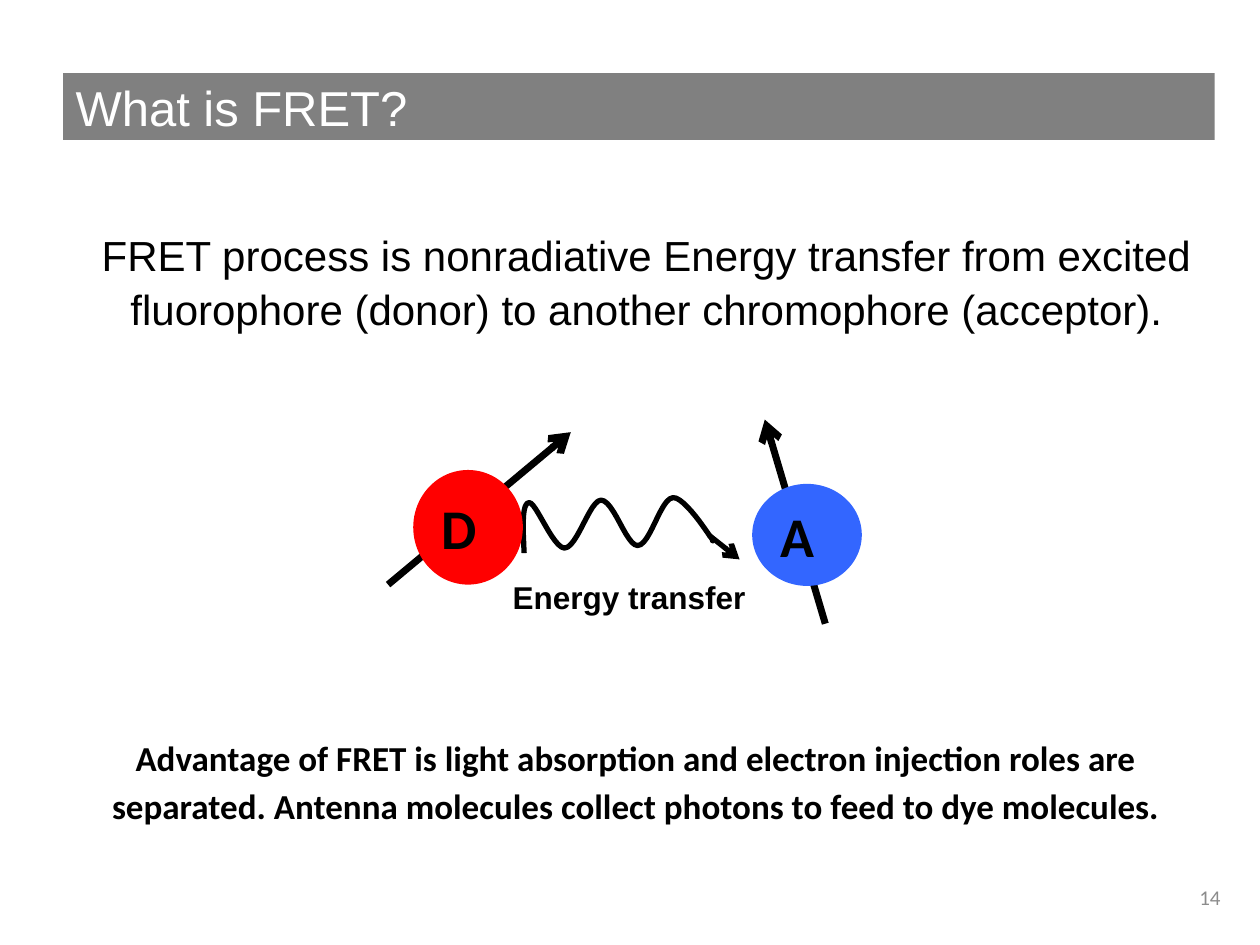
import pptx
import pptx.util
import pptx.dml.color
import pptx.enum.shapes
import pptx.enum.text
import pptx.oxml
import pptx.oxml.ns

COLORS = {"bar": "808080", "white": "FFFFFF", "black": "000000",
          "donor": "FF0000", "acceptor": "3366FF", "number": "8C8C8C"}
COLS, ROWS = 100, 75
CELL = pptx.util.Inches(0.1)
ALIGN = pptx.enum.text.PP_ALIGN
MIDDLE = pptx.enum.text.MSO_ANCHOR.MIDDLE


def rgb(name):
    return pptx.dml.color.RGBColor.from_string(COLORS[name])


def cells(*values):
    """Turn grid columns or rows into lengths."""
    return [round(v * CELL) for v in values]


def fill_shape(sp, color):
    sp.shadow.inherit = False
    sp.fill.solid()
    sp.fill.fore_color.rgb = rgb(color)
    sp.line.fill.background()


def set_text(sp, text, size, color="black", font="Arial", bold=False,
             align=ALIGN.LEFT, anchor=pptx.enum.text.MSO_ANCHOR.TOP):
    tf = sp.text_frame
    tf.word_wrap = True
    tf.auto_size = pptx.enum.text.MSO_AUTO_SIZE.NONE
    tf.vertical_anchor = anchor
    p = tf.paragraphs[0]
    p.text = text
    p.alignment = align
    p.font.size = pptx.util.Pt(size)
    p.font.name = font
    p.font.bold = bold
    p.font.color.rgb = rgb(color)
    return p


def add_text(s, box, text, size, **style):
    return set_text(s.shapes.add_textbox(*cells(*box)), text, size, **style)


def add_title(s, box, text):
    sp = s.shapes.title
    sp.left, sp.top, sp.width, sp.height = cells(*box)
    sp.fill.solid()
    sp.fill.fore_color.rgb = rgb("bar")
    set_text(sp, text, 28, "white", anchor=MIDDLE)


def add_arrow(s, start, end, width):
    line = s.shapes.add_connector(pptx.enum.shapes.MSO_CONNECTOR.STRAIGHT,
                                  *cells(*start, *end))
    line.line.color.rgb = rgb("black")
    line.line.width = pptx.util.Pt(width)
    pptx.oxml.ns.qn("a:tailEnd")
    ns = pptx.oxml.ns.nsdecls("a")
    line.line._get_or_add_ln().append(
        pptx.oxml.parse_xml(f'<a:tailEnd {ns} type="arrow"/>'))
    line._element.spPr.append(pptx.oxml.parse_xml(f"<a:effectLst {ns}/>"))


def curve_points(start, curves, steps=12):
    """Sample a chain of cubic Bezier curves."""
    points = [start]
    for a, b, end in curves:
        first = points[-1]
        for i in range(1, steps + 1):
            t = i / steps
            u = 1 - t
            weights = (u ** 3, 3 * u * u * t, 3 * u * t * t, t ** 3)
            points.append(tuple(sum(w * q[k] for w, q in
                                    zip(weights, (first, a, b, end)))
                                for k in (0, 1)))
    return points


def add_wave(s, x, y):
    curves = [
        ((11.5, 8.9), (11.4, 6.9), (12, 6.9)),
        ((12.5, 6.8), (13.9, 10.5), (14.8, 10.5)),
        ((15.8, 10.5), (16.8, 6.7), (17.7, 6.7)),
        ((18.7, 6.7), (19.7, 10.3), (20.6, 10.3)),
        ((21.6, 10.3), (22.4, 6.6), (23.4, 6.5)),
        ((24.3, 6.4), (26.3, 9.5), (26.3, 9.5)),
        ((26.8, 10.1), (26.4, 9.9), (26.6, 9.9)),
    ]
    points = [cells(x + px, y + py)
              for px, py in curve_points((11.6, 10.9), curves)]
    builder = s.shapes.build_freeform(*points[0])
    builder.add_line_segments(points[1:], close=False)
    sp = builder.convert_to_shape()
    sp.shadow.inherit = False
    sp.fill.background()
    sp.line.color.rgb = rgb("black")
    sp.line.width = pptx.util.Pt(3)


def add_molecule(s, box, letter, color):
    sp = s.shapes.add_shape(pptx.enum.shapes.MSO_SHAPE.OVAL, *cells(*box))
    fill_shape(sp, color)
    set_text(sp, letter, 32, font="Calibri", bold=True, anchor=MIDDLE)


def add_energy_diagram(s, x, y):
    """Draw donor, acceptor and transfer wave from the top left cell."""
    add_arrow(s, (x + 35.5, y + 16.5), (x + 30.7, y + 0.3), 4)
    add_wave(s, x, y)
    add_arrow(s, (x + 0.8, y + 13.4), (x + 15.3, y + 1.3), 4)
    add_molecule(s, (x + 2.8, y + 4.3, 8.7, 9.1), "D", "donor")
    add_molecule(s, (x + 29.7, y + 5.4, 8.7, 8.1), "A", "acceptor")
    add_arrow(s, (x + 26.3, y + 9.5), (x + 28.7, y + 11.4), 3)
    add_text(s, (x + 9.7, y + 12.4, 26.9, 5.2), "Energy transfer", 18,
             bold=True)


def main():
    prs = pptx.Presentation()
    prs.slide_width, prs.slide_height = cells(COLS, ROWS)
    s = prs.slides.add_slide(prs.slide_layouts[5])
    add_title(s, (5, 5.8, 91.4, 5.3), "What is FRET?")
    p = add_text(s, (6.7, 17.5, 89.2, 12.1),
                 "FRET process is nonradiative Energy transfer from excited "
                 "fluorophore (donor) to another chromophore (acceptor).",
                 24, align=ALIGN.CENTER)
    p.line_spacing = 1.06
    add_energy_diagram(s, 30, 33)
    p = add_text(s, (6.7, 57.5, 87.5, 8.5),
                 "Advantage of FRET is light absorption and electron injection "
                 "roles are separated. Antenna molecules collect photons to "
                 "feed to dye molecules.",
                 20, font="Calibri", bold=True, align=ALIGN.CENTER)
    p.line_spacing = 1.14
    p.space_after = pptx.util.Pt(6)
    add_text(s, (94.2, 69.2, 5.8, 4), "14", 12, color="number",
             font="Calibri", anchor=MIDDLE)
    prs.save("out.pptx")


if __name__ == "__main__":
    main()
